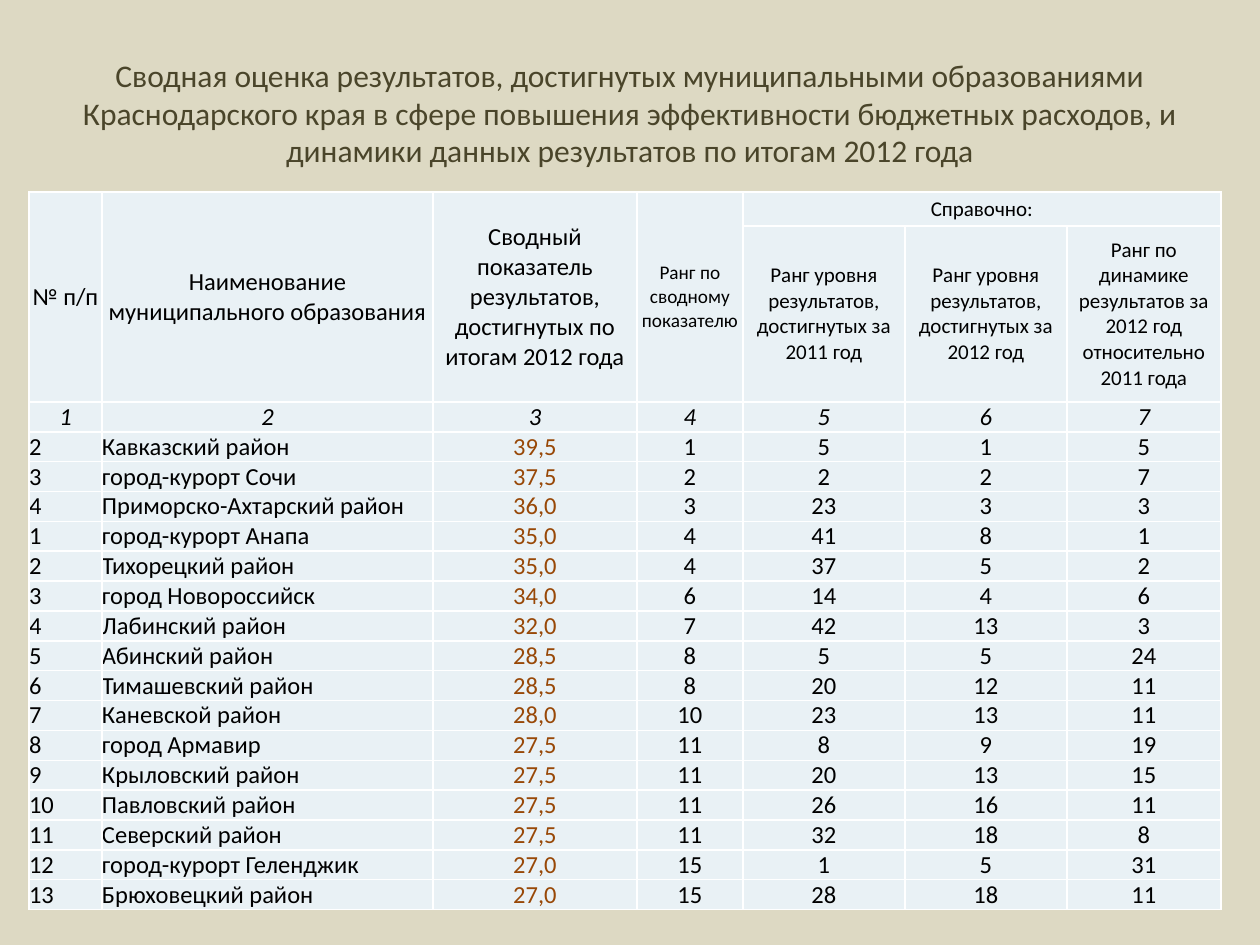
from dataclasses import dataclass

from lxml import etree
from pptx import Presentation
from pptx.dml.color import RGBColor
from pptx.enum.text import MSO_ANCHOR, PP_ALIGN
from pptx.oxml.ns import qn

EMU_PER_PX = 914400 // 126
LEFT, CENTER = PP_ALIGN.LEFT, PP_ALIGN.CENTER
MIDDLE, BOTTOM = MSO_ANCHOR.MIDDLE, MSO_ANCHOR.BOTTOM
TITLE_ONLY = 5


@dataclass(frozen=True)
class Theme:
    font: str = "Calibri"
    background: str = "DDD9C3"
    title: str = "4A452A"
    text: str = "000000"
    accent: str = "984807"
    cell: str = "E9F1F5"
    border: str = "FFFFFF"
    border_width: int = 12700
    title_size: int = 18
    body_size: int = 14
    note_size: int = 12
    small_size: int = 11


THEME = Theme()

PAGE_SIZE = (1260, 945)
TITLE_BOX = (59, 49, 1142, 127)
TABLE_BOX = (29, 192, 1192, 718)
COLUMN_WIDTHS = [73, 331, 204, 106, 162, 162, 154]
HEADER_HEIGHTS = [34, 176]

TITLE = (
    "Сводная оценка результатов, достигнутых муниципальными образованиями "
    "Краснодарского края в сфере повышения эффективности бюджетных расходов, "
    "и динамики данных результатов по итогам 2012 года"
)

# Row, column, last row, last column, text, size
HEADERS = [
    (0, 0, 1, 0, "№ п/п", THEME.body_size),
    (0, 1, 1, 1, "Наименование муниципального образования", THEME.body_size),
    (0, 2, 1, 2, "Сводный показатель результатов, достигнутых по итогам 2012 года",
     THEME.body_size),
    (0, 3, 1, 3, "Ранг по сводному показателю", THEME.small_size),
    (0, 4, 0, 6, "Справочно:", THEME.note_size),
    (1, 4, 1, 4, "Ранг уровня результатов, достигнутых за 2011 год", THEME.note_size),
    (1, 5, 1, 5, "Ранг уровня результатов, достигнутых за 2012 год", THEME.note_size),
    (1, 6, 1, 6, "Ранг по динамике результатов за 2012 год относительно 2011 года",
     THEME.note_size),
]

RESULTS = [
    ("2", "Кавказский район", "39,5", "1", "5", "1", "5"),
    ("3", "город-курорт Сочи", "37,5", "2", "2", "2", "7"),
    ("4", "Приморско-Ахтарский район", "36,0", "3", "23", "3", "3"),
    ("1", "город-курорт Анапа", "35,0", "4", "41", "8", "1"),
    ("2", "Тихорецкий район", "35,0", "4", "37", "5", "2"),
    ("3", "город Новороссийск", "34,0", "6", "14", "4", "6"),
    ("4", "Лабинский район", "32,0", "7", "42", "13", "3"),
    ("5", "Абинский район", "28,5", "8", "5", "5", "24"),
    ("6", "Тимашевский район", "28,5", "8", "20", "12", "11"),
    ("7", "Каневской район", "28,0", "10", "23", "13", "11"),
    ("8", "город Армавир", "27,5", "11", "8", "9", "19"),
    ("9", "Крыловский район", "27,5", "11", "20", "13", "15"),
    ("10", "Павловский район", "27,5", "11", "26", "16", "11"),
    ("11", "Северский район", "27,5", "11", "32", "18", "8"),
    ("12", "город-курорт Геленджик", "27,0", "15", "1", "5", "31"),
    ("13", "Брюховецкий район", "27,0", "15", "28", "18", "11"),
]


def px(length):
    return round(length * EMU_PER_PX)


def write_text(frame, text, *, size=THEME.body_size, color=THEME.text,
               align=CENTER, italic=False):
    para = frame.paragraphs[0]
    para.alignment = align
    span = para.add_run()
    span.text = text
    span.font.name = THEME.font
    span.font.size = size * 12700
    span.font.italic = italic
    span.font.color.rgb = RGBColor.from_string(color)


def style_cell(cell):
    """Remove the insets, then add the four borders and the fill."""
    cell.margin_left = cell.margin_right = 0
    cell.margin_top = cell.margin_bottom = 0
    properties = cell._tc.get_or_add_tcPr()
    for side in ("a:lnL", "a:lnR", "a:lnT", "a:lnB"):
        line = etree.SubElement(properties, qn(side), w=str(THEME.border_width))
        fill = etree.SubElement(line, qn("a:solidFill"))
        etree.SubElement(fill, qn("a:srgbClr"), val=THEME.border)
    cell.fill.solid()
    cell.fill.fore_color.rgb = RGBColor.from_string(THEME.cell)


def place_title(page, box):
    title = page.shapes.title
    title.left, title.top, title.width, title.height = map(px, box)
    title.text_frame.word_wrap = True
    title.text_frame.vertical_anchor = MIDDLE
    write_text(title.text_frame, TITLE, size=THEME.title_size, color=THEME.title)


def fill_headers(table):
    for row, column, last_row, last_column, text, size in HEADERS:
        cell = table.cell(row, column)
        if (row, column) != (last_row, last_column):
            cell.merge(table.cell(last_row, last_column))
        cell.vertical_anchor = MIDDLE
        write_text(cell.text_frame, text, size=size)
    for column in range(len(COLUMN_WIDTHS)):
        cell = table.cell(len(HEADER_HEIGHTS), column)
        cell.vertical_anchor = MIDDLE
        write_text(cell.text_frame, str(column + 1), italic=True)


def fill_results(table):
    for row, values in enumerate(RESULTS, start=len(HEADER_HEIGHTS) + 1):
        for column, value in enumerate(values):
            cell = table.cell(row, column)
            cell.vertical_anchor = BOTTOM
            write_text(cell.text_frame, value,
                       align=LEFT if column < 2 else CENTER,
                       color=THEME.accent if column == 2 else THEME.text)


def place_table(page, box):
    body_rows = len(RESULTS) + 1
    body_height = (box[3] - sum(HEADER_HEIGHTS)) / body_rows
    heights = HEADER_HEIGHTS + [body_height] * body_rows
    table = page.shapes.add_table(len(heights), len(COLUMN_WIDTHS),
                                  *map(px, box)).table
    table.first_row = table.horz_banding = False
    for column, width in zip(table.columns, COLUMN_WIDTHS):
        column.width = px(width)
    for row, height in zip(table.rows, heights):
        row.height = px(height)
    for cell in table.iter_cells():
        style_cell(cell)
    fill_headers(table)
    fill_results(table)


def main():
    deck = Presentation()
    deck.slide_width, deck.slide_height = map(px, PAGE_SIZE)
    page = deck.slides.add_slide(deck.slide_layouts[TITLE_ONLY])
    page.background.fill.solid()
    page.background.fill.fore_color.rgb = RGBColor.from_string(THEME.background)
    place_title(page, TITLE_BOX)
    place_table(page, TABLE_BOX)
    deck.save("out.pptx")


if __name__ == "__main__":
    main()
